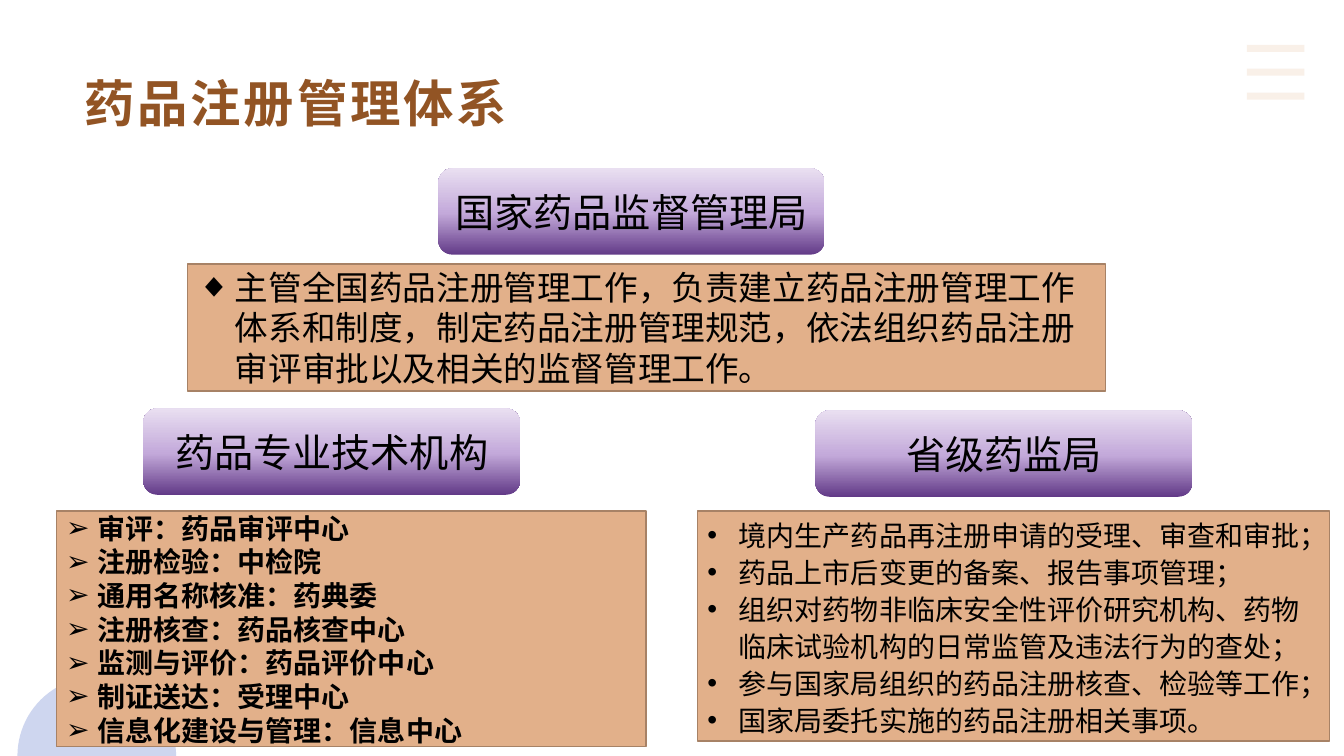
from dataclasses import dataclass
from math import cos, pi, sin

from lxml.etree import SubElement
from pptx import Presentation
from pptx.dml.color import RGBColor
from pptx.enum.shapes import MSO_CONNECTOR as Link, MSO_SHAPE as Kind
from pptx.enum.text import MSO_ANCHOR as Anchor, PP_ALIGN as Align
from pptx.oxml.ns import qn
from pptx.util import Cm, Pt

FONT = "Noto Sans CJK SC"
BLACK, SAND, EDGE = "000000", "E2B08A", "A78266"
BROWN, BLUE = "925424", "9FAEE0"
DARK, MID, PALE = "623A87", "C3A9DA", "E9DFF1"


@dataclass
class Box:
    left: float
    top: float
    width: float
    height: float

    def place(self) -> tuple:
        return Cm(self.left), Cm(self.top), Cm(self.width), Cm(self.height)


@dataclass
class Head:
    box: Box
    text: str


@dataclass
class Panel:
    box: Box
    lines: list[str]
    mark: str
    size: int
    indent: float
    bold: bool = False
    space: float = 1.0


HEADS = [
    Head(Box(11.05, 4.24, 9.73, 2.18), "国家药品监督管理局"),
    Head(Box(3.61, 10.29, 9.5, 2.18), "药品专业技术机构"),
    Head(Box(20.55, 10.34, 9.5, 2.18), "省级药监局"),
]
PANELS = [
    Panel(Box(4.72, 6.65, 23.14, 3.2), [
        "主管全国药品注册管理工作，负责建立药品注册管理工作体系和制度，"
        "制定药品注册管理规范，依法组织药品注册审评审批以及相关的监督管理工作。",
    ], "◆", 24, 0.95),
    Panel(Box(1.42, 12.88, 14.86, 5.94), [
        "审评：药品审评中心",
        "注册检验：中检院",
        "通用名称核准：药典委",
        "注册核查：药品核查中心",
        "监测与评价：药品评价中心",
        "制证送达：受理中心",
        "信息化建设与管理：信息中心",
    ], "➢", 20, 0.79, bold=True),
    Panel(Box(17.58, 12.88, 15.93, 5.79), [
        "境内生产药品再注册申请的受理、审查和审批；",
        "药品上市后变更的备案、报告事项管理；",
        "组织对药物非临床安全性评价研究机构、药物临床试验机构的日常监管及违法行为的查处；",
        "参与国家局组织的药品注册核查、检验等工作；",
        "国家局委托实施的药品注册相关事项。",
    ], "•", 20, 0.79, space=1.1),
]


def tint(code: str) -> RGBColor:
    return RGBColor.from_string(code)


def fade(shape, share: int) -> None:
    """Set the opacity, in percent, of the shape's solid colour."""
    for node in shape._element.spPr.iter(qn("a:srgbClr")):
        SubElement(node, qn("a:alpha")).set("val", str(share * 1000))


def style(para, size: int, color: str = BLACK, bold: bool = False) -> None:
    for run in para.runs:
        font = run.font
        font.size, font.bold, font.name = Pt(size), bold, FONT
        font.color.rgb = tint(color)
        SubElement(run._r.get_or_add_rPr(), qn("a:ea")).set("typeface", FONT)


def bullet(para, mark: str, indent: float) -> None:
    props = para._p.get_or_add_pPr()
    props.set("marL", str(Cm(indent)))
    props.set("indent", str(-Cm(indent)))
    SubElement(props, qn("a:buFont")).set("typeface", "Arial")
    SubElement(props, qn("a:buChar")).set("char", mark)


def add_bars(slide) -> None:
    for row in range(3):
        y = Cm(1.22 + 0.6 * row)
        bar = slide.shapes.add_connector(Link.STRAIGHT, Cm(31.42), y, Cm(32.87), y)
        bar.line.color.rgb, bar.line.width = tint(SAND), Pt(5)
        fade(bar, 18)
        SubElement(bar._element.spPr, qn("a:effectLst"))


def add_dome(slide) -> None:
    mid, base, size, steps = 2.44, 19.05, 2.0, 48
    arc = [(Cm(mid - size * cos(pi * n / steps)), Cm(base - size * sin(pi * n / steps)))
           for n in range(steps + 1)]
    path = slide.shapes.build_freeform(*arc[0])
    path.add_line_segments(arc[1:], close=True)
    dome = path.convert_to_shape()
    dome.shadow.inherit = False
    dome.fill.solid()
    dome.fill.fore_color.rgb = tint(BLUE)
    dome.line.fill.background()
    fade(dome, 50)


def add_title(slide) -> None:
    frame = slide.shapes.add_textbox(*Box(1.88, 1.7, 23.88, 3.66).place()).text_frame
    frame.word_wrap = True
    frame.text = "药品注册管理体系"
    para = frame.paragraphs[0]
    style(para, 36, BROWN, True)
    para.runs[0]._r.get_or_add_rPr().set("spc", "200")


def add_head(slide, head: Head) -> None:
    shape = slide.shapes.add_shape(Kind.ROUNDED_RECTANGLE, *head.box.place())
    shape.shadow.inherit = False
    shape.line.fill.background()
    # Gradient from dark at the bottom to pale at the top
    shape.fill.gradient()
    shape.fill.gradient_angle = 90
    stops = shape.fill._fill._gradFill.find(qn("a:gsLst"))
    for stop in list(stops):
        stops.remove(stop)
    for spot, code in ((0, DARK), (48, MID), (100, PALE)):
        stop = SubElement(stops, qn("a:gs"))
        stop.set("pos", str(spot * 1000))
        SubElement(stop, qn("a:srgbClr")).set("val", code)
    frame = shape.text_frame
    frame.text, frame.vertical_anchor = head.text, Anchor.MIDDLE
    para = frame.paragraphs[0]
    para.alignment = Align.CENTER
    style(para, 28)


def add_panel(slide, panel: Panel) -> None:
    shape = slide.shapes.add_shape(Kind.RECTANGLE, *panel.box.place())
    shape.shadow.inherit = False
    shape.fill.solid()
    shape.fill.fore_color.rgb = tint(SAND)
    shape.line.color.rgb, shape.line.width = tint(EDGE), Pt(1)
    frame = shape.text_frame
    frame.text, frame.vertical_anchor = "\n".join(panel.lines), Anchor.MIDDLE
    for para in frame.paragraphs:
        para.alignment, para.line_spacing = Align.LEFT, panel.space
        style(para, panel.size, bold=panel.bold)
        bullet(para, panel.mark, panel.indent)


def main() -> None:
    deck = Presentation()
    deck.slide_width, deck.slide_height = Cm(33.87), Cm(19.05)
    slide = deck.slides.add_slide(deck.slide_layouts[6])
    # Decoration and title
    add_bars(slide)
    add_dome(slide)
    add_title(slide)
    # Authorities and their duties
    for head in HEADS:
        add_head(slide, head)
    for panel in PANELS:
        add_panel(slide, panel)
    deck.save("out.pptx")


if __name__ == "__main__":
    main()
